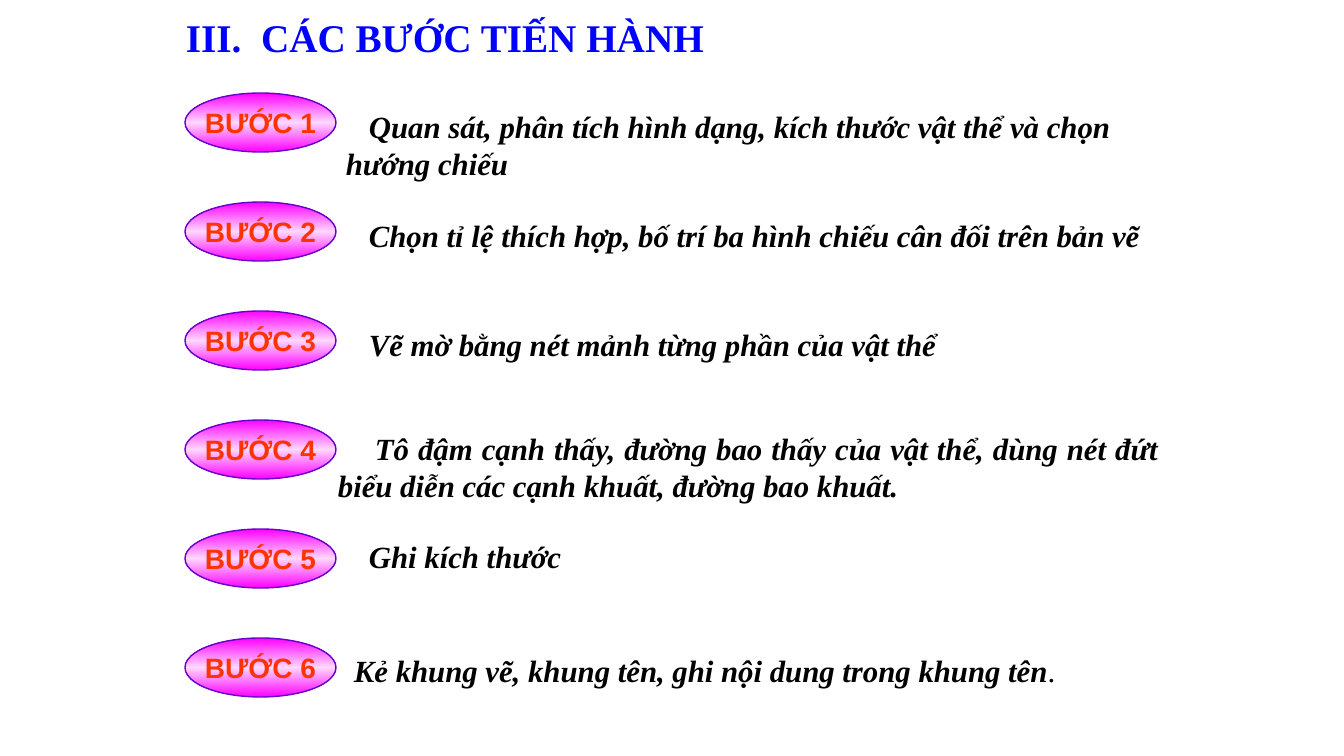
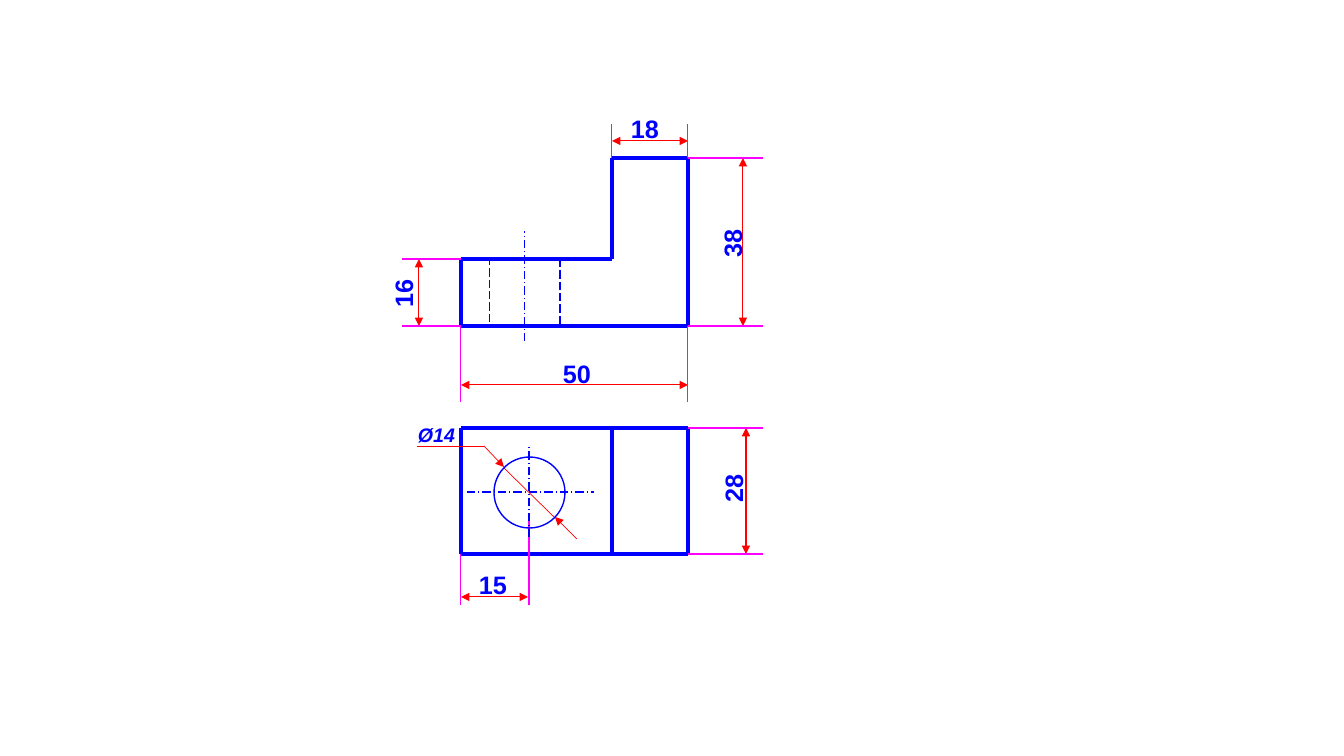
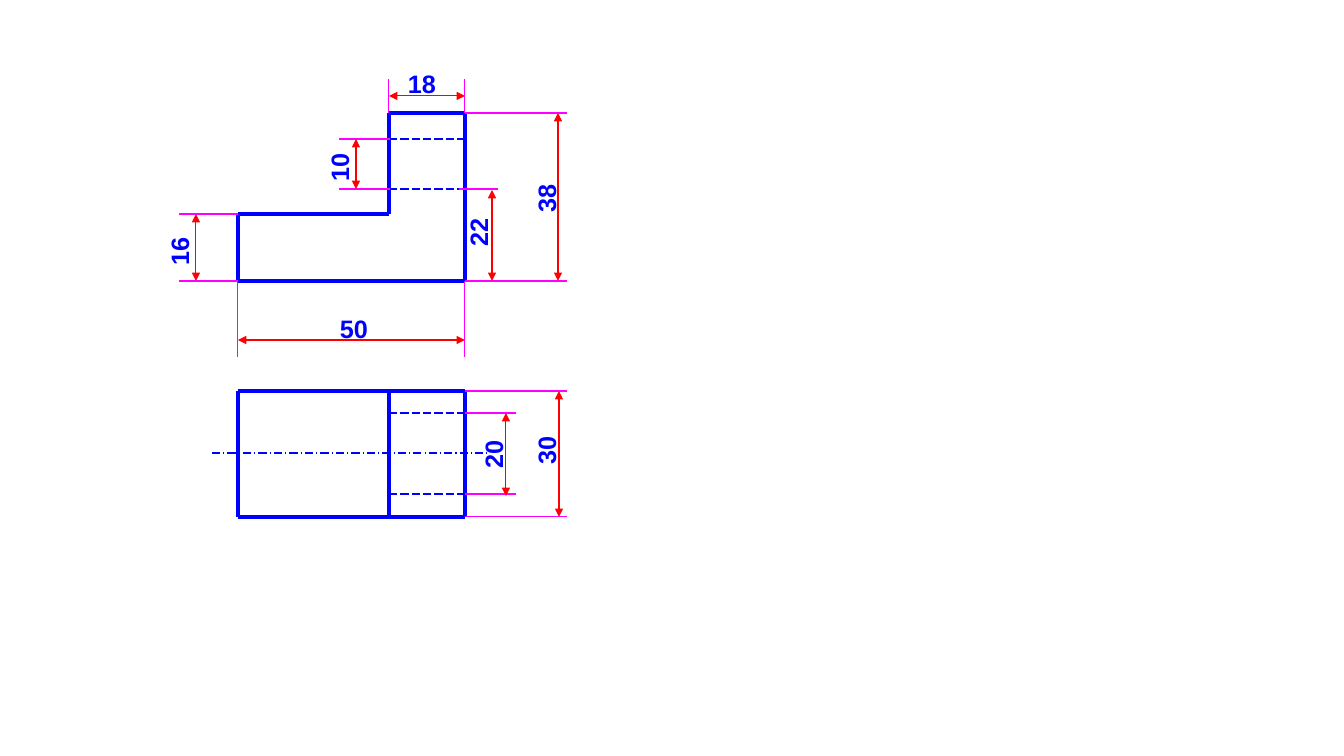
from copy import deepcopy
from lxml import etree
from pptx import Presentation
from pptx.dml.color import RGBColor
from pptx.enum.dml import MSO_LINE
from pptx.enum.shapes import MSO_CONNECTOR, MSO_SHAPE
from pptx.enum.text import MSO_ANCHOR, PP_ALIGN
from pptx.oxml.ns import qn
from pptx.util import Pt

PX = 914400 * 10 // 1008
BLUE = RGBColor(0x00, 0x00, 0xFF)
RED = RGBColor(0xFF, 0x00, 0x00)
PINK = RGBColor(0xFF, 0x00, 0xFF)
PALE = RGBColor(0xFF, 0xD7, 0xFF)
VIOLET = RGBColor(0x66, 0x00, 0xCC)
ORANGE = RGBColor(0xFF, 0x33, 0x00)
BLACK = RGBColor(0x00, 0x00, 0x00)
SANS, SERIF = "Arial", "Times New Roman"
STRAIGHT = MSO_CONNECTOR.STRAIGHT
OVAL, RING = MSO_SHAPE.OVAL, MSO_SHAPE.FLOWCHART_CONNECTOR
LEFT, CENTER, JUST = PP_ALIGN.LEFT, PP_ALIGN.CENTER, PP_ALIGN.JUSTIFY
MIDDLE = MSO_ANCHOR.MIDDLE

EDGE = (BLUE, 3, None, ())
HIDDEN = (BLUE, 0.75, MSO_LINE.LONG_DASH, ())
AXIS = (BLUE, 0.75, MSO_LINE.LONG_DASH_DOT, ())
GUIDE = (PINK, 0.75, None, ())
SIZE = (RED, 0.75, None, ("a:headEnd", "a:tailEnd"))
THIN = (RED, 0.5, None, ())
POINT = (RED, 0.5, None, ("a:tailEnd",))


def stroke(slide, style, x1, y1, x2, y2):
    color, weight, dash, tips = style
    line = slide.shapes.add_connector(STRAIGHT, x1 * PX, y1 * PX, x2 * PX, y2 * PX)
    line.line.color.rgb = color
    line.line.width = Pt(weight)
    if dash:
        line.line.dash_style = dash
    props = line._element.spPr
    for tip in tips:
        etree.SubElement(props.find(qn("a:ln")), qn(tip), type="triangle")
    etree.SubElement(props, qn("a:effectLst"))


def write(slide, text, x, y, w, h, size=18, font=SANS, color=BLUE, italic=False, turn=0):
    box = slide.shapes.add_textbox(x * PX, y * PX, w * PX, h * PX)
    box.rotation = turn
    box.text_frame.word_wrap = True
    para = box.text_frame.paragraphs[0]
    para.text = text
    para.font.size = Pt(size)
    para.font.name = font
    para.font.bold = True
    para.font.italic = italic
    para.font.color.rgb = color
    return para


deck = Presentation()
deck.slide_width = 1344 * PX
deck.slide_height = 756 * PX
blank = deck.slide_layouts[6]

slide = deck.slides.add_slide(blank)
write(slide, "III.  CÁC BƯỚC TIẾN HÀNH", 176, 8, 950, 57, 28, SERIF)
steps = [
    ("Quan sát, phân tích hình dạng, kích thước vật thể và chọn hướng chiếu", 336, 103, 815, 23, LEFT),
    ("Chọn tỉ lệ thích hợp, bố trí ba hình chiếu cân đối trên bản vẽ", 336, 212, 832, 23, LEFT),
    ("Vẽ mờ bằng nét mảnh từng phần của vật thể", 336, 321, 815, 23, JUST),
    ("Tô đậm cạnh thấy, đường bao thấy của vật thể, dùng nét đứt biểu diễn các cạnh khuất, "
     "đường bao khuất.", 328, 425, 840, 37, JUST),
    ("Ghi kích thước", 359, 533, 815, 0, JUST),
    ("Kẻ khung vẽ, khung tên, ghi nội dung trong khung tên", 336, 647, 806, 8, LEFT),
]
for i, (text, x, y, w, indent, align) in enumerate(steps):
    pill = slide.shapes.add_shape(OVAL, 185 * PX, (93 + 109 * i) * PX, 151 * PX, 59 * PX)
    pill.shadow.inherit = False
    pill.fill.gradient()
    pill.fill.gradient_angle = 90
    stops = pill._element.spPr.find(".//" + qn("a:gsLst"))
    stops.insert(1, deepcopy(stops[0]))
    for stop, color, place in zip(pill.fill.gradient_stops, (PINK, PALE, PINK), (0, 0.5, 1)):
        stop.color.rgb = color
        stop.position = place
    pill.line.color.rgb = VIOLET
    pill.line.width = Pt(1)
    pill.text_frame.word_wrap = False
    pill.text_frame.vertical_anchor = MIDDLE
    para = pill.text_frame.paragraphs[0]
    para.text = f"BƯỚC {i + 1}"
    para.alignment = CENTER
    para.font.size = Pt(20)
    para.font.name = SANS
    para.font.bold = True
    para.font.color.rgb = ORANGE
    para = write(slide, text, x, y, w, 47, 22, SERIF, BLACK, True)
    para.alignment = align
    para._p.get_or_add_pPr().set("indent", str(indent * PX))
dot = para.add_run()
dot.text = "."
dot.font.bold = dot.font.italic = False

hole = [
    (HIDDEN, 490, 257, 490, 325),
    (HIDDEN, 560, 259, 560, 326),
    (AXIS, 525, 341, 525, 231),
    (GUIDE, 461, 554, 461, 605),
    (GUIDE, 529, 521, 529, 605),
    (SIZE, 461, 597, 528, 597),
    (AXIS, 467, 492, 594, 492),
    (AXIS, 529, 537, 529, 445),
    (POINT, 577, 539, 555, 517),
    (THIN, 504, 468, 554, 517),
    (POINT, 484, 446, 504, 467),
    (THIN, 417, 446, 484, 446),
]
slot = [
    (HIDDEN, 389, 139, 465, 139),
    (HIDDEN, 389, 189, 465, 189),
    (GUIDE, 459, 189, 498, 189),
    (SIZE, 492, 190, 492, 281),
    (GUIDE, 339, 139, 390, 139),
    (GUIDE, 339, 189, 390, 189),
    (SIZE, 356, 139, 356, 189),
    (HIDDEN, 389, 413, 465, 413),
    (HIDDEN, 389, 494, 465, 494),
    (GUIDE, 465, 413, 516, 413),
    (GUIDE, 465, 494, 516, 494),
    (SIZE, 506, 413, 506, 496),
    (AXIS, 212, 453, 490, 453),
]
turned = [
    [("38", 707, 222), ("16", 378, 272), ("28", 708, 467)],
    [("38", 521, 177), ("16", 154, 230), ("22", 453, 211),
     ("20", 468, 433), ("10", 314, 146), ("30", 521, 429)],
]
sheets = [
    (461, 158, 428, 763, 743, 746, hole, turned[0]),
    (238, 113, 391, 567, 558, 559, slot, turned[1]),
]
for x, y, top, reach, tall, deep, extra, sides in sheets:
    slide = deck.slides.add_slide(blank)
    step, end = x + 151, x + 227
    ledge, base, low = y + 101, y + 168, top + 126
    common = [
        (EDGE, x, base, end, base),
        (EDGE, x, ledge, step, ledge),
        (EDGE, step, ledge, step, y),
        (EDGE, step, y, end, y),
        (EDGE, end, base, end, y),
        (EDGE, x, base, x, ledge),
        (SIZE, tall, y, tall, base),
        (SIZE, x, base + 59, end, base + 59),
        (SIZE, x - 42, ledge, x - 42, base),
        (SIZE, step, y - 17, end, y - 17),
        (SIZE, deep, top, deep, low),
    ]
    common += [(EDGE, x, row, end, row) for row in (top, low)]
    common += [(EDGE, col, top, col, low) for col in (x, step, end)]
    common += [(GUIDE, end, row, reach, row) for row in (y, base, top, low)]
    common += [(GUIDE, col, base, col, base + 76) for col in (x, end)]
    common += [(GUIDE, x, row, x - 59, row) for row in (ledge, base)]
    common += [(GUIDE, col, y, col, y - 34) for col in (step, end)]
    for item in common + extra:
        stroke(slide, *item)
    write(slide, "18", x + 160, y - 50, 50, 40)
    write(slide, "50", x + 92, y + 195, 58, 40)
    for text, left, head in sides:
        write(slide, text, left, head, 50, 40, turn=270)

slide = deck.slides[1]
write(slide, "15", 469, 564, 58, 40)
write(slide, "Ø14", 408, 418, 62, 34, 14, italic=True)
ring = slide.shapes.add_shape(RING, 494 * PX, 457 * PX, 71 * PX, 71 * PX)
ring.shadow.inherit = False
ring.fill.background()
ring.line.color.rgb = BLUE
ring.line.width = Pt(1)

deck.save("out.pptx")
